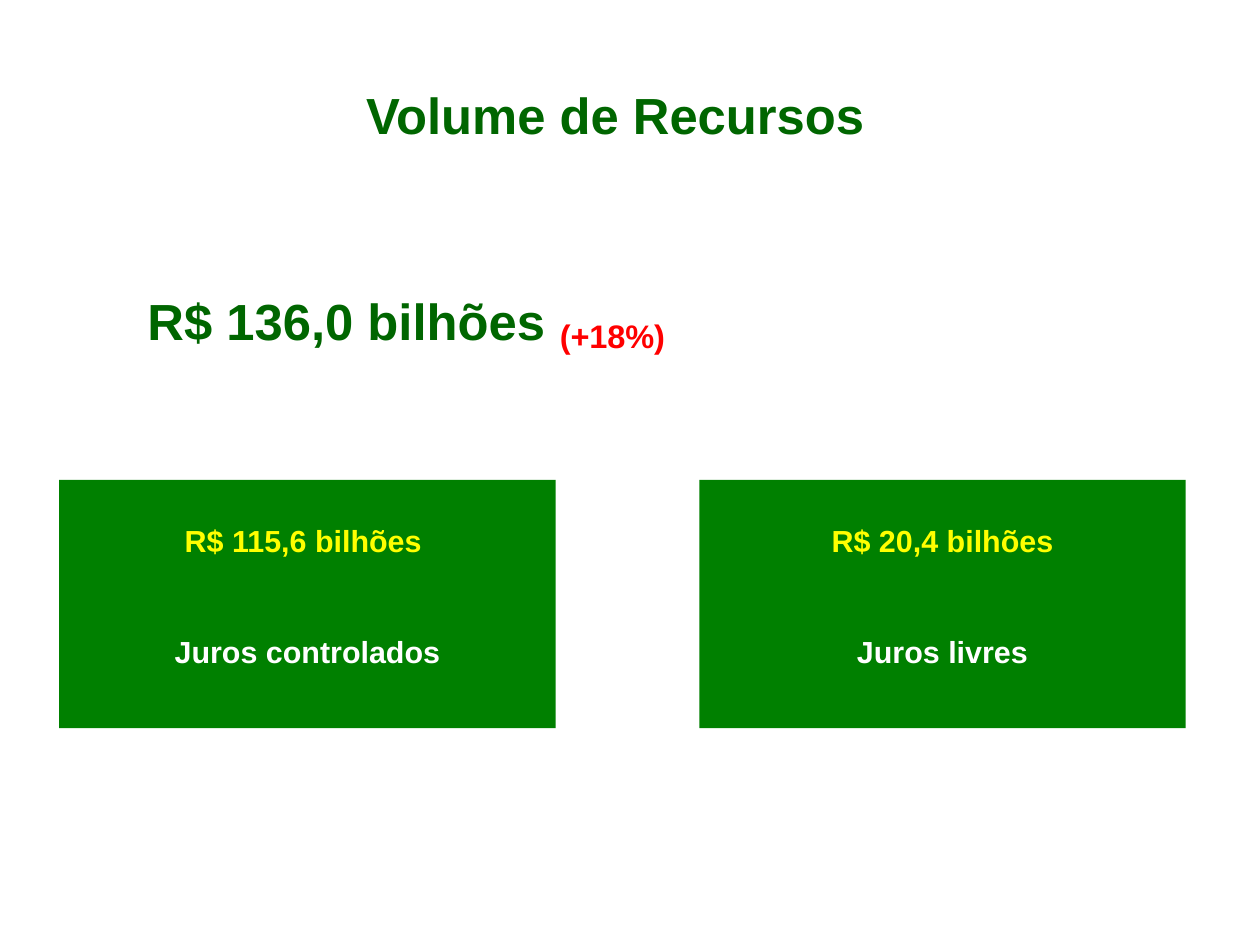
"""Build the slide on the volume of funds and its split by interest type."""
from pptx import Presentation
from pptx.dml.color import RGBColor
from pptx.enum.shapes import MSO_SHAPE
from pptx.enum.text import MSO_ANCHOR, PP_ALIGN
from pptx.util import Inches, Pt

COLORS = {
    "heading": "006600",
    "growth": "FF0000",
    "box": "008000",
    "amount": "FFFF00",
    "label": "FFFFFF",
}


def add_raised_run(paragraph, text, size, color):
    run = paragraph.add_run()
    run.text = text
    run.font.name = "Arial"
    run.font.size = Pt(size)
    run.font.bold = True
    run.font.color.rgb = RGBColor.from_string(COLORS[color])
    run._r.get_or_add_rPr().set("baseline", "25000")


presentation = Presentation()
presentation.slide_width = Inches(10)
presentation.slide_height = Inches(7.5)
slide = presentation.slides.add_slide(presentation.slide_layouts[6])

headings = [
    (0.71, 0.48, 8.35, PP_ALIGN.CENTER, [("Volume de Recursos", 50, "heading")]),
    (1.1, 2.11, 7.41, PP_ALIGN.LEFT,
     [("R$ 136,0 bilhões ", 50, "heading"), ("(+18%)", 32, "growth")]),
]
for left, top, width, alignment, runs in headings:
    text_box = slide.shapes.add_textbox(Inches(left), Inches(top), Inches(width), Inches(0.94))
    text_frame = text_box.text_frame
    text_frame.word_wrap = True
    text_frame.margin_left = text_frame.margin_right = Inches(0.07)
    text_frame.margin_top = text_frame.margin_bottom = Inches(0.07)
    paragraph = text_frame.paragraphs[0]
    paragraph.alignment = alignment
    for text, size, color in runs:
        add_raised_run(paragraph, text, size, color)

interest_boxes = [
    (0.47, 3.94, "R$ 115,6 bilhões ", "Juros controlados"),
    (5.55, 3.86, "R$ 20,4 bilhões", "Juros livres"),
]
for left, width, amount, label in interest_boxes:
    box = slide.shapes.add_shape(
        MSO_SHAPE.RECTANGLE, Inches(left), Inches(3.81), Inches(width), Inches(1.97))
    box.shadow.inherit = False
    box.fill.solid()
    box.fill.fore_color.rgb = RGBColor.from_string(COLORS["box"])
    box.line.fill.background()
    text_frame = box.text_frame
    text_frame.word_wrap = False
    text_frame.vertical_anchor = MSO_ANCHOR.MIDDLE
    amount_paragraph = text_frame.paragraphs[0]
    label_paragraph = text_frame.add_paragraph()
    label_paragraph.space_before = Pt(31)
    for paragraph, text, color in [
        (amount_paragraph, amount, "amount"),
        (label_paragraph, label, "label"),
    ]:
        paragraph.alignment = PP_ALIGN.CENTER
        paragraph.line_spacing = 0.9
        add_raised_run(paragraph, text, 30, color)

presentation.save("out.pptx")
